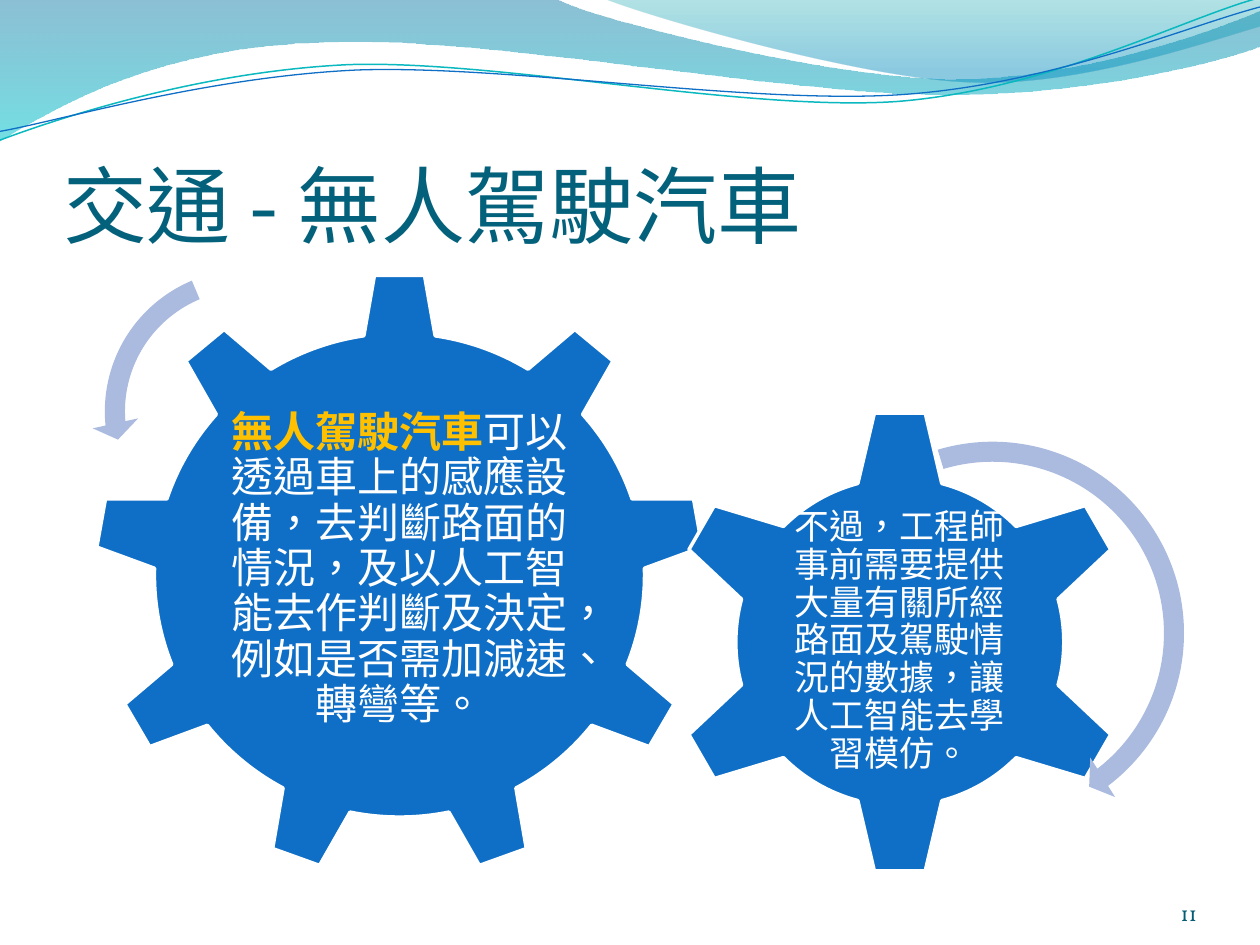
from pptx import Presentation
from pptx.dml.color import RGBColor
from pptx.enum.shapes import MSO_SHAPE as Preset
from pptx.enum.text import MSO_ANCHOR as Anchor, PP_ALIGN as Align
from pptx.oxml.ns import qn
from pptx.util import Pt
from lxml.etree import SubElement

THEME = {
    "title": "04617B", "gear": "0F6FC6", "edge": "FFFFFF", "arrow": "ABBBDF",
    "text": "FFFFFF", "accent": "FFC000", "number": "045D75", "teal": "0AB8BF",
    "wave": [(0, "0074A1", 45), (1, "00C6CF", 55)],
    "crest": [(0, "00A1A9", 30), (0.8, "008BBF", 45)],
    "title_size": 48, "large_size": 24, "small_size": 20, "number_size": 12,
    "font": "Noto Sans CJK SC", "number_font": "Vollkorn",
}


def draw_curve(shapes, start, segments, closed):
    points = [segment[i:i + 2] for segment in segments for i in range(0, len(segment), 2)]
    builder = shapes.build_freeform(Pt(start[0]), Pt(start[1]))
    builder.add_line_segments([(Pt(x), Pt(y)) for x, y in points], close=closed)
    shape = builder.convert_to_shape()
    shape.shadow.inherit = False
    lines = iter(shape._element.findall(".//" + qn("a:lnTo")))
    for segment in segments:
        first = next(lines)
        if len(segment) == 6:
            outline = first.getparent()
            curve = SubElement(outline, qn("a:cubicBezTo"))
            outline.replace(first, curve)
            for line in (first, next(lines), next(lines)):
                curve.append(line[0])
                if line is not first:
                    outline.remove(line)
    return shape


def write_text(shape, box, runs, anchor, align, insets, spacing=1.0):
    shape.left, shape.top, shape.width, shape.height = map(Pt, box)
    frame = shape.text_frame
    sides = ("margin_left", "margin_top", "margin_right", "margin_bottom")
    settings = {"word_wrap": True, "vertical_anchor": anchor, **dict(zip(sides, map(Pt, insets)))}
    for name, value in settings.items():
        setattr(frame, name, value)
    paragraph = frame.paragraphs[0]
    paragraph.alignment, paragraph.line_spacing = align, spacing
    for text, size, color, bold, font in runs:
        run = paragraph.add_run()
        run.text = text
        for name, value in {"size": Pt(size), "bold": bold, "name": font}.items():
            setattr(run.font, name, value)
        run.font.color.rgb = RGBColor.from_string(color)
        run.font._element.set("lang", "zh-TW")
        SubElement(run.font._element, qn("a:ea")).set("typeface", font)


presentation = Presentation()
presentation.slide_width, presentation.slide_height = Pt(720), Pt(540)
slide = presentation.slides.add_slide(presentation.slide_layouts[5])
shapes = slide.shapes

waves = [
    ("wave", (0, 0), [
        (317, -1), (343, 12, 478, 45, 546, 45), (614, 45, 690, 19, 720, 6), (721, 26),
        (708, 32, 626, 55, 537, 54), (447, 54, 275, 20, 185, 24), (93, 26, 33, 60, -1, 81)]),
    ("crest", (345, -1), [
        (366, 8, 491, 45, 554, 47), (616, 50, 692, 23, 720, 15), (720, 0)]),
]
for name, start, segments in waves:
    wave = draw_curve(shapes, start, segments, True)
    wave.line.fill.background()
    wave.fill.gradient()
    wave.fill.gradient_angle = 270
    for stop, (position, color, _) in zip(wave.fill.gradient_stops, THEME[name]):
        stop.position = position
        stop.color.rgb = RGBColor.from_string(color)
    colors = wave._element.spPr.findall(".//" + qn("a:srgbClr"))
    for element, (_, _, opacity) in zip(colors, THEME[name]):
        SubElement(element, qn("a:alpha")).set("val", str(opacity * 1000))

swooshes = [
    ("teal", 0.85, (-1.4, 63.1), [
        (34.2, 51.7, 114.3, 29.4, 199.4, 29.4), (284.4, 30.5, 425.8, 67.2, 512, 65.2),
        (599.3, 62.3, 676.1, 25.9, 720.6, 15.9)]),
    ("gear", 0.75, (-1.1, 58.1), [
        (33.2, 53.7, 118.2, 32.6, 204.3, 32.7), (290.3, 33.7, 429.1, 63.3, 515.3, 61.4),
        (601.5, 59.4, 679, 30, 721.4, 21)]),
]
for color, width, start, segments in swooshes:
    swoosh = draw_curve(shapes, start, segments, False)
    swoosh.rotation = 357.3
    swoosh.fill.background()
    swoosh.line.width = Pt(width)
    swoosh.line.color.rgb = RGBColor.from_string(THEME[color])

write_text(shapes.title, (36, 55.5, 648, 90),
           [("交通 - 無人駕駛汽車", THEME["title_size"], THEME["title"], False, THEME["font"])],
           Anchor.BOTTOM, Align.LEFT, (0, 3.6, 0, 0))

gears = [
    (Preset.GEAR_9, (53.7, 155.9, 349.2, 345.6), (124, 236.7, 209, 178), "large_size", [
        ("無人駕駛汽車", "accent", True),
        ("可以透過車上的感應設備，去判斷路面的情況，及以人工智能去作判斷及決定，"
         "例如是否需加減速、轉彎等。", "text", False)]),
    (Preset.GEAR_6, (380.3, 233, 267.8, 267.8), (447.6, 300.6, 133, 132), "small_size", [
        ("不過，工程師事前需要提供大量有關所經路面及駕駛情況的數據，"
         "讓人工智能去學習模仿。", "text", False)]),
]
for preset, gear_box, text_box, size, parts in gears:
    gear = shapes.add_shape(preset, *map(Pt, gear_box))
    gear.shadow.inherit = False
    gear.fill.solid()
    gear.fill.fore_color.rgb = RGBColor.from_string(THEME["gear"])
    gear.line.color.rgb = RGBColor.from_string(THEME["edge"])
    gear.line.width = Pt(2)
    runs = [(text, THEME[size], THEME[color], bold, THEME["font"]) for text, color, bold in parts]
    write_text(shapes.add_textbox(*map(Pt, text_box)), text_box, runs,
               Anchor.MIDDLE, Align.CENTER, (2, 2, 2, 2), 0.9)

arrows = [
    (Preset.CIRCULAR_ARROW, (450.2, 244.8, 234, 234), (0.049, 3.126, 31.577, 152.01, 0.057)),
    (Preset.LEFT_CIRCULAR_ARROW, (52.4, 146.6, 177.1, 177.1),
     (0.065, 4.3, 104.891, 148.378, 0.075)),
]
for preset, box, adjustments in arrows:
    arrow = shapes.add_shape(preset, *map(Pt, box))
    arrow.shadow.inherit = False
    for index, value in enumerate(adjustments):
        arrow.adjustments[index] = value
    arrow.fill.solid()
    arrow.fill.fore_color.rgb = RGBColor.from_string(THEME["arrow"])
    arrow.line.fill.background()

number_box = (624, 500, 60, 28.8)
write_text(shapes.add_textbox(*map(Pt, number_box)), number_box,
           [("11", THEME["number_size"], THEME["number"], False, THEME["number_font"])],
           Anchor.BOTTOM, Align.RIGHT, (0, 0, 0, 0))

presentation.save("out.pptx")
